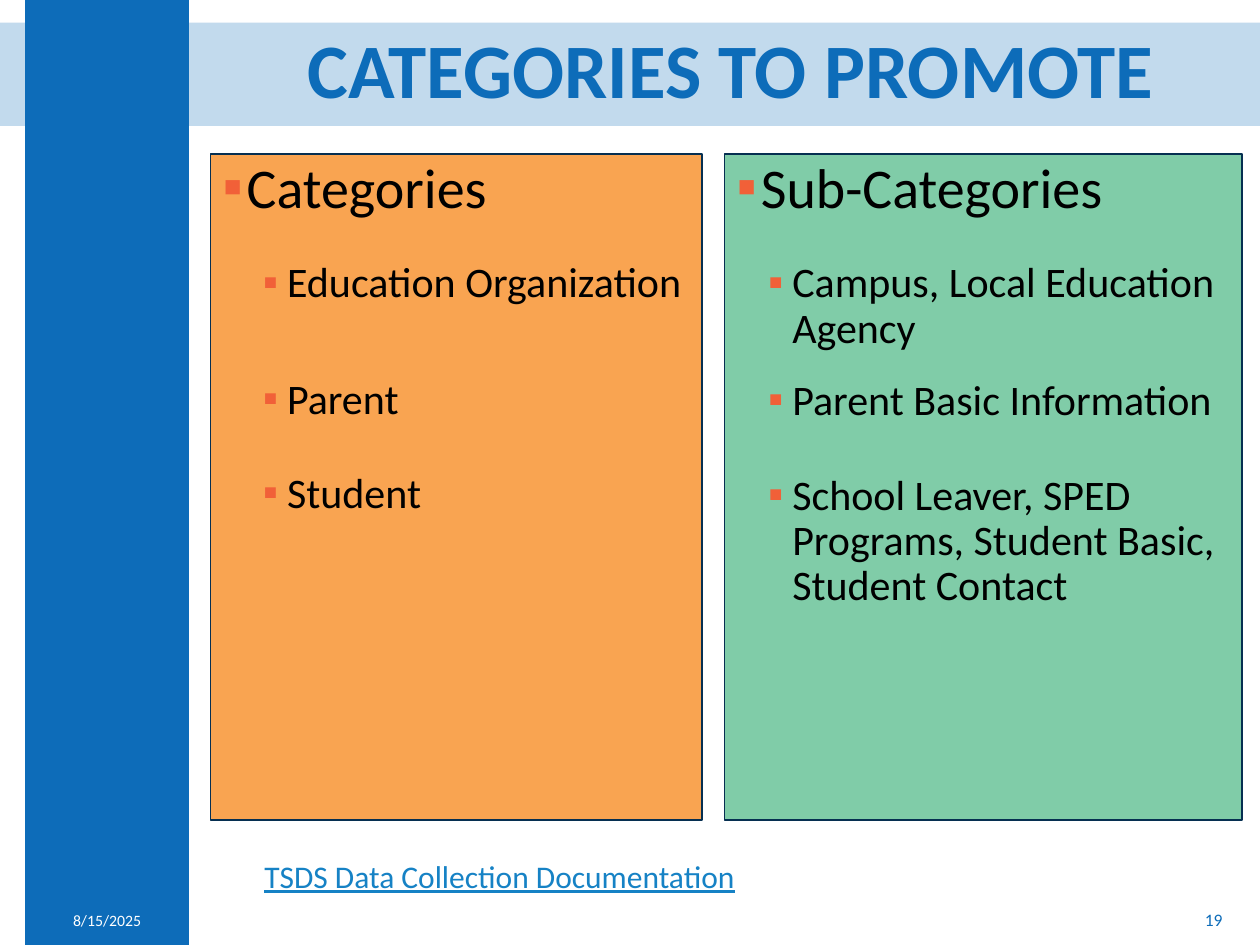
import pptx
import pptx.util
import pptx.dml.color
import pptx.enum.shapes
import pptx.enum.text
import pptx.oxml
import pptx.oxml.ns
from lxml import etree

Inches = pptx.util.Inches
Pt = pptx.util.Pt
ALIGN = pptx.enum.text.PP_ALIGN
ANCHOR = pptx.enum.text.MSO_ANCHOR

BLUE = "0D6CB9"
ORANGE = "F9A451"
GREEN = "80CCA8"
OUTLINE = "062F51"
BULLET = "F16038"
PANEL_TOP, PANEL_HEIGHT = 1.22, 5.29


def color(hex_string):
    return pptx.dml.color.RGBColor.from_string(hex_string)


def apply(target, values):
    for name, value in values.items():
        setattr(target, name, value)


def style_font(font, size, hex_string, **values):
    apply(font, {"name": "Calibri", "size": Pt(size), **values})
    font.color.rgb = color(hex_string)


def add_child(parent, tag, **attributes):
    child = etree.SubElement(parent, pptx.oxml.ns.qn(tag))
    for name, value in attributes.items():
        child.set(name, value)
    return child


def add_rectangle(slide, box, fill, line=None, opacity=None):
    shape = slide.shapes.add_shape(
        pptx.enum.shapes.MSO_SHAPE.RECTANGLE, *map(Inches, box))
    shape.shadow.inherit = False
    shape.fill.solid()
    shape.fill.fore_color.rgb = color(fill)
    if opacity is not None:
        fill_color = shape.fill._xPr.find(".//" + pptx.oxml.ns.qn("a:srgbClr"))
        add_child(fill_color, "a:alpha", val=str(opacity * 1000))
    if line:
        shape.line.color.rgb = color(line)
        shape.line.width = Pt(1)
    else:
        shape.line.fill.background()


def add_text_frame(slide, box, **values):
    frame = slide.shapes.add_textbox(*map(Inches, box)).text_frame
    apply(frame, {"word_wrap": True, **values})
    return frame


def add_label(slide, box, text, size, hex_string, align=ALIGN.LEFT,
              anchor=ANCHOR.MIDDLE, line_spacing=1.0, margins=None, **font_values):
    frame = add_text_frame(slide, box, vertical_anchor=anchor, **(margins or {}))
    paragraph = frame.paragraphs[0]
    apply(paragraph, {"text": text, "alignment": align, "line_spacing": line_spacing})
    style_font(paragraph.runs[0].font, size, hex_string, **font_values)


def add_bullet(paragraph, text, size, indent, space_before=None, level=0):
    apply(paragraph, {"text": text, "level": level, "line_spacing": 0.9})
    if space_before:
        paragraph.space_before = Pt(space_before)
    properties = paragraph._p.get_or_add_pPr()
    properties.set("marL", str(Inches(indent)))
    properties.set("indent", str(Inches(-0.19)))
    bullet_color = add_child(properties, "a:buClr")
    add_child(bullet_color, "a:srgbClr", val=BULLET)
    add_child(properties, "a:buFont", typeface="Calibri")
    add_child(properties, "a:buChar", char="▪")
    style_font(paragraph.runs[0].font, size, "000000")


def add_list(slide, box, heading, indent, items):
    frame = add_text_frame(slide, box)
    add_bullet(frame.paragraphs[0], heading, 32, 0.19)
    for text, space_before in items:
        add_bullet(frame.add_paragraph(), text, 24, indent, space_before, level=1)


def main():
    presentation = pptx.Presentation()
    presentation.slide_width = Inches(10)
    presentation.slide_height = Inches(7.5)
    slide = presentation.slides.add_slide(presentation.slide_layouts[6])

    # Title band, side bar and date
    add_rectangle(slide, (0, 0.18, 10, 0.82), BLUE, opacity=25)
    add_rectangle(slide, (0.2, 0, 1.3, 7.5), BLUE)
    date_margins = {"margin_left": Inches(0.07), "margin_right": Inches(0.07),
                    "margin_top": Inches(0.04), "margin_bottom": Inches(0.04)}
    add_label(slide, (0.2, 7.1, 1.3, 0.4), "8/15/2025", 9, "FFFFFF",
              ALIGN.CENTER, margins=date_margins)
    add_label(slide, (1.9, 0.17, 7.8, 0.82), "CATEGORIES TO PROMOTE", 44, BLUE,
              ALIGN.CENTER, line_spacing=0.9, bold=True)

    # Panels: left, width, fill, text width, heading, item indent, items with space before
    panels = [
        (1.67, 3.9, ORANGE, 3.9, "Categories", 0.51,
         [("Education Organization", 23.5), ("Parent", 40.5), ("Student", 28)]),
        (5.75, 4.11, GREEN, 4.03, "Sub-Categories", 0.44,
         [("Campus, Local Education Agency", 23.5),
          ("Parent Basic Information", 15.5),
          ("School Leaver, SPED Programs, Student Basic, Student Contact", 28)]),
    ]
    for left, width, fill, text_width, heading, indent, items in panels:
        add_rectangle(slide, (left, PANEL_TOP, width, PANEL_HEIGHT), fill, OUTLINE)
        add_list(slide, (left, PANEL_TOP, text_width, PANEL_HEIGHT),
                 heading, indent, items)

    # Slide number and documentation reference
    add_label(slide, (7.55, 7.1, 2.25, 0.4), "19", 10, BLUE, ALIGN.RIGHT)
    add_label(slide, (2, 6.75, 6.59, 0.4), "TSDS Data Collection Documentation",
              18, "1682C5", anchor=ANCHOR.TOP, underline=True)

    presentation.save("out.pptx")


if __name__ == "__main__":
    main()
